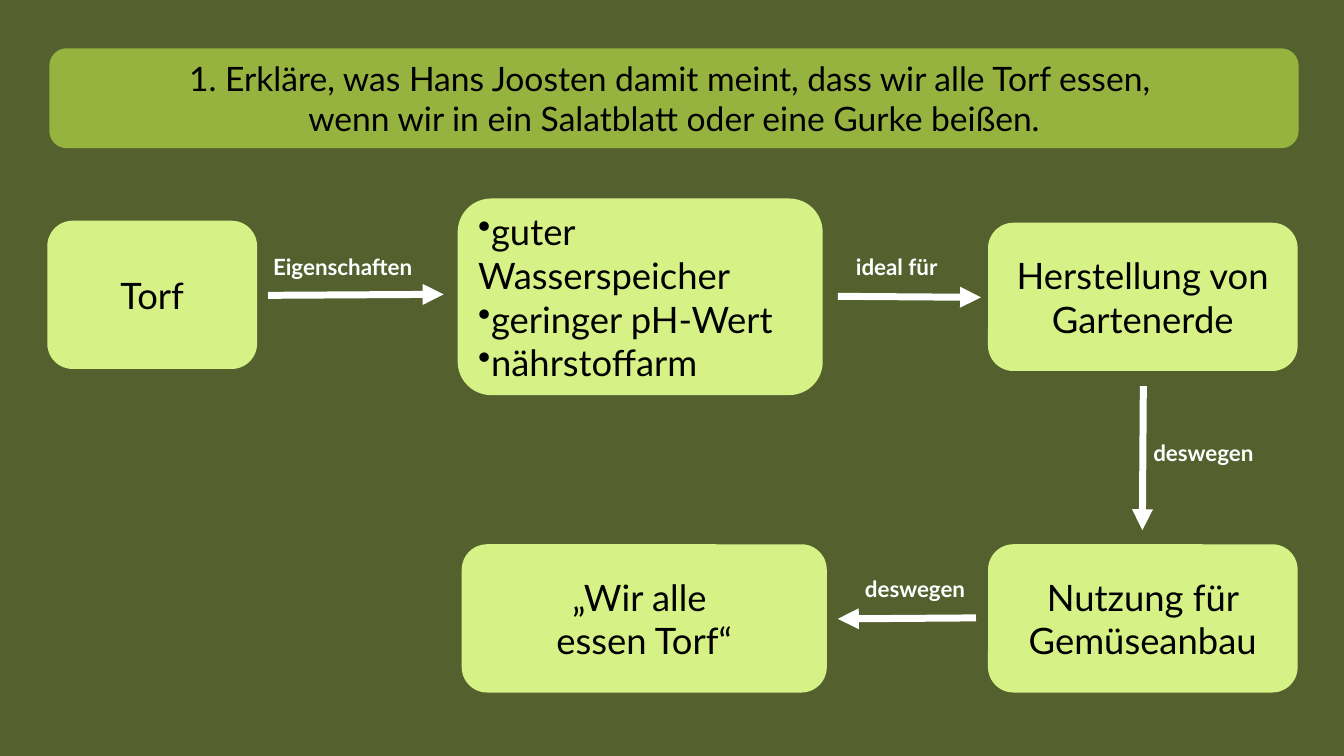
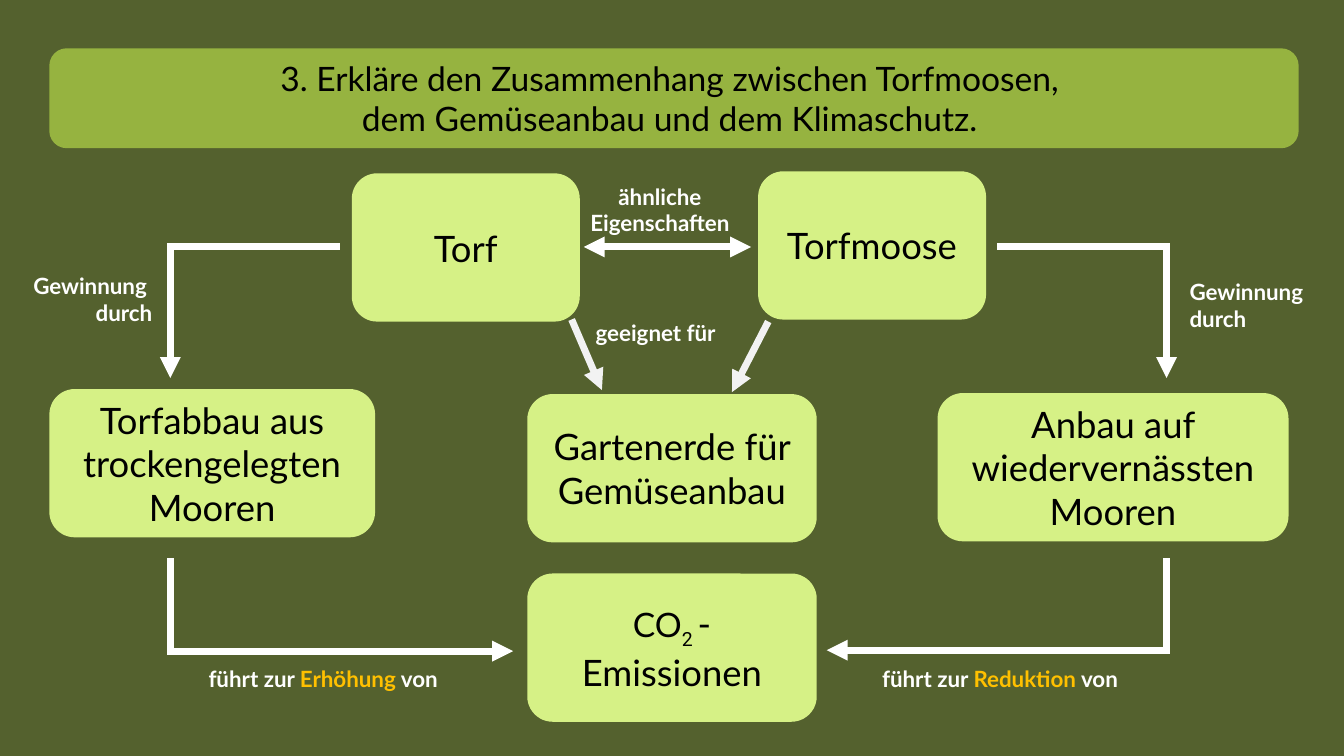
"""Build two concept-map slides about peat, gardening and climate."""
import pptx
import pptx.chart.data
import pptx.dml.color
import pptx.enum.shapes
import pptx.enum.text
import pptx.oxml.ns
import pptx.util
import lxml.etree

Inches = pptx.util.Inches
Pt = pptx.util.Pt
RGB = pptx.dml.color.RGBColor.from_string
ALIGN = pptx.enum.text.PP_ALIGN
qn = pptx.oxml.ns.qn

HUES = {
    "back": "54612E",
    "band": "96B340",
    "box": "D6F186",
    "ink": "000000",
    "white": "FFFFFF",
    "pale": "F2F2F2",
    "gold": "FFC000",
}
BASE = {"name": "Lato", "bold": False}
LOOKS = {
    "band": {**BASE, "size": Pt(24)},
    "box": {**BASE, "size": Pt(26)},
    "label": {**BASE, "size": Pt(16), "bold": True},
}
FRAME = {
    "word_wrap": True,
    "vertical_anchor": pptx.enum.text.MSO_ANCHOR.MIDDLE,
}
TALL = 1.45
LEFT, MID, RIGHT = ALIGN.LEFT, ALIGN.CENTER, ALIGN.RIGHT

SLIDES = [
    {
        "title": [
            "1. Erkläre, was Hans Joosten damit meint, dass wir alle Torf essen, ",
            "wenn wir in ein Salatblatt oder eine Gurke beißen.",
        ],
        "boxes": [
            (0.48, 2.2, 2.06, TALL, ["Torf"], MID),
            (4.55, 1.98, 3.6, 1.93,
             ["guter Wasserspeicher", "geringer pH-Wert", "nährstoffarm"], LEFT),
            (9.81, 2.22, 3.05, TALL, ["Herstellung von Gartenerde"], MID),
            (4.59, 5.41, 3.6, TALL, ["„Wir alle ", "essen Torf“"], MID),
            (9.81, 5.41, 3.05, TALL, ["Nutzung für Gemüseanbau"], MID),
        ],
        "labels": [
            (2.61, 2.46, 1.74, 0.37, ["Eigenschaften"], LEFT),
            (8.39, 2.46, 1.38, 0.37, ["ideal für"], LEFT),
            (11.34, 4.3, 1.59, 0.37, ["deswegen"], LEFT),
            (8.48, 5.65, 1.51, 0.37, ["deswegen"], LEFT),
        ],
        "lines": [
            (2.66, 2.93, 4.4, 2.92, "white", ["tailEnd"]),
            (8.31, 2.94, 9.73, 2.95, "white", ["tailEnd"]),
            (11.34, 3.83, 11.33, 5.26, "white", ["tailEnd"]),
            (9.68, 6.13, 8.31, 6.14, "white", ["tailEnd"]),
        ],
    },
    {
        "title": [
            "3. Erkläre den Zusammenhang zwischen Torfmoosen, ",
            "dem Gemüseanbau und dem Klimaschutz. ",
        ],
        "boxes": [
            (3.5, 1.73, 2.24, TALL, ["Torf"], MID),
            (7.53, 1.71, 2.24, TALL, ["Torfmoose"], MID),
            (5.24, 3.92, 2.85, TALL, ["Gartenerde für Gemüseanbau"], MID),
            (5.24, 5.7, 2.85, TALL,
             [[("CO", "ink", {"size": Pt(24)}),
               ("2 ", "ink", {"size": Pt(24), "name": "Roboto"}),
               ("- Emissionen", "ink", {})]], MID),
            (9.31, 3.91, 3.46, TALL, ["Anbau auf wiedervernässten Mooren"], MID),
            (0.5, 3.87, 3.21, TALL, ["Torfabbau aus trockengelegten Mooren"], MID),
        ],
        "labels": [
            (5.6, 1.76, 1.89, 0.64, ["ähnliche Eigenschaften"], MID),
            (5.81, 3.11, 1.74, 0.37, ["geeignet für"], LEFT),
            (0.11, 2.65, 1.5, 0.64, ["Gewinnung ", "durch"], RIGHT),
            (11.7, 2.71, 1.5, 0.64, ["Gewinnung", "durch"], LEFT),
            (1.97, 6.55, 3.06, 0.37,
             [[("führt zur ", "white", {}), ("Erhöhung", "gold", {}),
               (" von", "white", {})]], LEFT),
            (8.65, 6.55, 3.18, 0.37,
             [[("führt zur ", "white", {}), ("Reduktion", "gold", {}),
               (" von", "white", {})]], LEFT),
        ],
        "lines": [
            (5.79, 2.45, 7.45, 2.45, "white", ["headEnd", "tailEnd"]),
            (5.67, 3.17, 5.97, 3.87, "pale", ["tailEnd"]),
            (7.62, 3.19, 7.26, 3.89, "pale", ["tailEnd"]),
            (3.37, 2.45, 1.66, 2.45, "white", []),
            (1.69, 2.45, 1.69, 3.75, "white", ["tailEnd"]),
            (1.69, 5.54, 1.69, 6.46, "white", []),
            (1.66, 6.46, 5.09, 6.46, "white", ["tailEnd"]),
            (9.89, 2.45, 11.6, 2.45, "white", []),
            (11.57, 2.45, 11.57, 3.75, "white", ["tailEnd"]),
            (11.57, 5.54, 11.57, 6.45, "white", []),
            (11.6, 6.45, 8.2, 6.45, "white", ["tailEnd"]),
        ],
    },
]


def write(shape, paras, side, look, hue):
    frame = shape.text_frame
    for key, val in FRAME.items():
        setattr(frame, key, val)
    for num, runs in enumerate(paras):
        para = frame.add_paragraph() if num else frame.paragraphs[0]
        para.alignment = side
        if isinstance(runs, str):
            runs = [(runs, hue, {})]
        for text, tint, extra in runs:
            run = para.add_run()
            run.text = text
            for key, val in {**LOOKS[look], **extra}.items():
                setattr(run.font, key, val)
            run.font.color.rgb = RGB(HUES[tint])
            if text == "2 ":
                run._r.get_or_add_rPr().set("baseline", "-25000")


def panel(slide, box, paras, side, look):
    shape = slide.shapes.add_shape(
        pptx.enum.shapes.MSO_SHAPE.ROUNDED_RECTANGLE, *map(Inches, box))
    shape.shadow.inherit = False
    shape.fill.solid()
    shape.fill.fore_color.rgb = RGB(HUES[look])
    shape.line.color.rgb = RGB(HUES[look])
    shape.line.width = Pt(1.5)
    write(shape, paras, side, look, "ink")
    return shape


deck = pptx.Presentation()
deck.slide_width, deck.slide_height = Inches(13.33), Inches(7.5)
fill = deck.slide_master.background.fill
fill.solid()
fill.fore_color.rgb = RGB(HUES["back"])

for page in SLIDES:
    slide = deck.slides.add_slide(deck.slide_layouts[6])
    panel(slide, (0.5, 0.49, 12.37, 0.97), page["title"], MID, "band")

    for *box, paras, side in page["boxes"]:
        shape = panel(slide, box, paras, side, "box")
        if side == LEFT:
            for para in shape.text_frame.paragraphs:
                props = para._p.get_or_add_pPr()
                props.set("marL", "0")
                props.set("indent", str(-Inches(0.2)))
                lxml.etree.SubElement(props, qn("a:buChar")).set("char", "•")

    for x1, y1, x2, y2, hue, ends in page["lines"]:
        line = slide.shapes.add_connector(
            pptx.enum.shapes.MSO_CONNECTOR.STRAIGHT,
            *map(Inches, (x1, y1, x2, y2)))
        line.line.color.rgb = RGB(HUES[hue])
        line.line.width = Pt(5)
        for end in ends:
            tip = lxml.etree.SubElement(line.line._get_or_add_ln(), qn("a:" + end))
            tip.set("type", "triangle")
        lxml.etree.SubElement(line._element.spPr, qn("a:effectLst"))

    for *box, paras, side in page["labels"]:
        label = slide.shapes.add_textbox(*map(Inches, box))
        write(label, paras, side, "label", "white")

deck.save("out.pptx")
